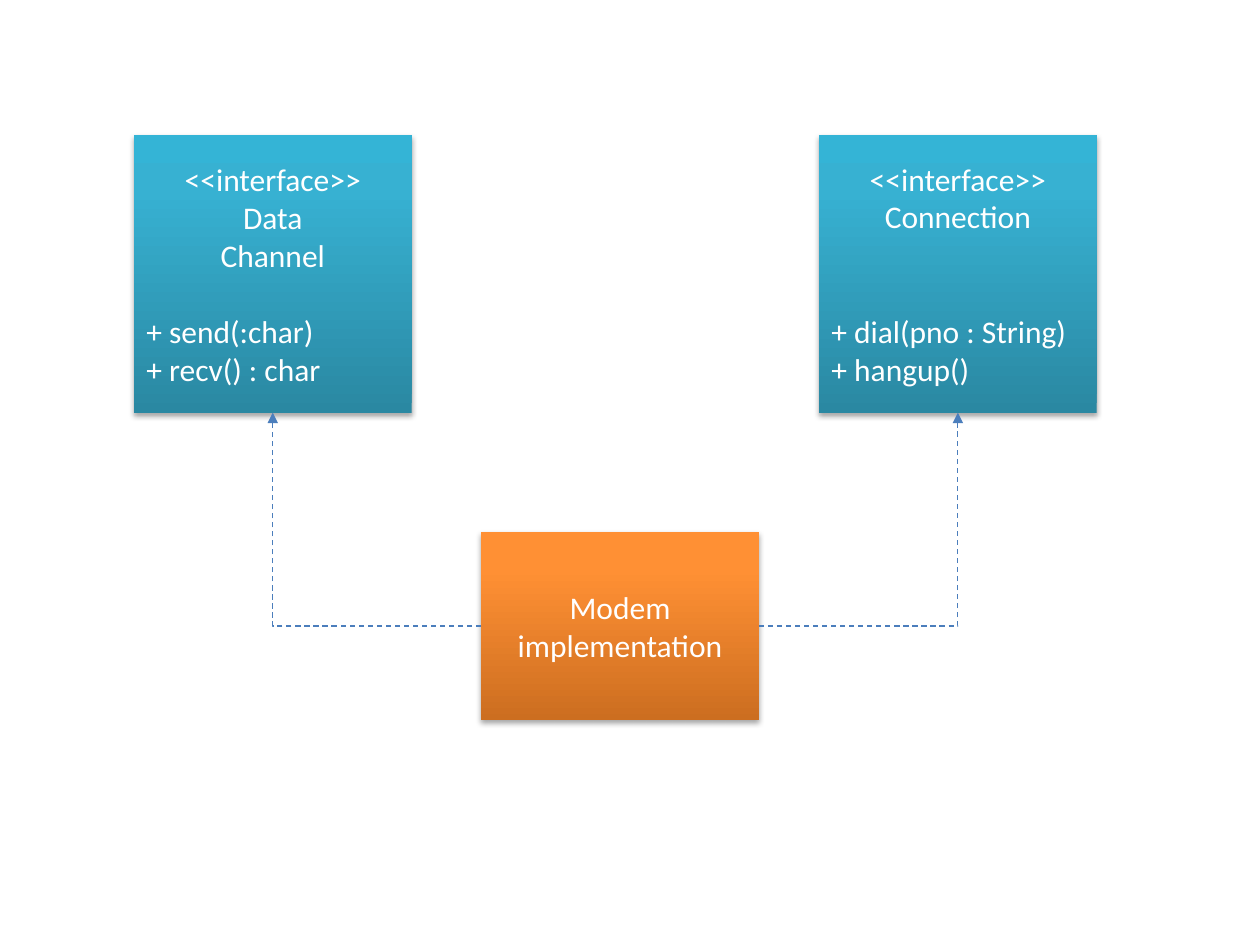
from lxml.etree import SubElement
from pptx import Presentation
from pptx.dml.color import RGBColor
from pptx.enum.dml import MSO_LINE
from pptx.enum.shapes import MSO_CONNECTOR, MSO_SHAPE
from pptx.enum.text import MSO_ANCHOR, PP_ALIGN
from pptx.oxml.ns import qn
from pptx.util import Cm, Pt

WHITE = RGBColor(0xFF, 0xFF, 0xFF)
BLACK = RGBColor(0, 0, 0)
LINE_BLUE = RGBColor(0x4B, 0x7E, 0xBC)
TEAL = (RGBColor(0x2A, 0x88, 0xA2), RGBColor(0x37, 0xB1, 0xD2), RGBColor(0x34, 0xB4, 0xD6))
ORANGE = (RGBColor(0xCC, 0x6E, 0x20), RGBColor(0xFF, 0x90, 0x34), RGBColor(0xFF, 0x91, 0x36))
STOPS = (0, 80000, 100000)

FONT = "Calibri"
LINE_HEIGHT = 22
BOX_WIDTH = Cm(5.6)
INTERFACE_TOP = Cm(2.72)
INTERFACE_HEIGHT = Cm(5.6)
TOP, LEFT, BOTTOM, RIGHT = range(4)


def set_gradient(sp, colors):
    sp.fill.gradient()
    sp.fill.gradient_angle = 90
    gs_lst = sp._element.spPr.find(qn("a:gradFill")).find(qn("a:gsLst"))
    for gs in list(gs_lst):
        gs_lst.remove(gs)
    for pos, color in zip(STOPS, colors):
        gs = SubElement(gs_lst, qn("a:gs"), pos=str(pos))
        SubElement(gs, qn("a:srgbClr"), val=str(color))


def set_shadow(sp):
    sp.shadow.inherit = False
    effects = sp._element.spPr.find(qn("a:effectLst"))
    shadow = SubElement(effects, qn("a:outerShdw"), blurRad=str(Pt(3.1)),
                        dist=str(Pt(1.8)), dir="5400000", rotWithShape="0")
    color = SubElement(shadow, qn("a:srgbClr"), val=str(BLACK))
    SubElement(color, qn("a:alpha"), val="35000")


def add_line(p, text, align):
    p.alignment = align
    r = p.add_run()
    r.text = text
    r.font.name = FONT
    r.font.size = Pt(18)
    r.font.color.rgb = WHITE


def add_box(slide, left, top, height, colors, title, methods=(), gap_lines=0):
    sp = slide.shapes.add_shape(MSO_SHAPE.RECTANGLE, left, top, BOX_WIDTH, height)
    set_gradient(sp, colors)
    sp.line.fill.background()
    set_shadow(sp)
    tf = sp.text_frame
    tf.word_wrap = True
    tf.vertical_anchor = MSO_ANCHOR.MIDDLE
    lines = [(text, PP_ALIGN.CENTER) for text in title]
    lines += [(text, PP_ALIGN.LEFT) for text in methods]
    for i, (text, align) in enumerate(lines):
        p = tf.add_paragraph() if i else tf.paragraphs[0]
        add_line(p, text, align)
        if i == len(title):
            p.space_before = Pt(gap_lines * LINE_HEIGHT)
    return sp


def add_interface(slide, left, name, methods, gap_lines):
    return add_box(slide, left, INTERFACE_TOP, INTERFACE_HEIGHT, TEAL,
                   ["<<interface>>", *name], methods, gap_lines)


def add_realization(slide, source, side, target):
    cxn = slide.shapes.add_connector(MSO_CONNECTOR.ELBOW, 0, 0, 0, 0)
    cxn.begin_connect(source, side)
    cxn.end_connect(target, BOTTOM)
    spPr = cxn._element.spPr
    spPr.find(qn("a:prstGeom")).set("prst", "bentConnector2")
    cxn.line.color.rgb = LINE_BLUE
    cxn.line.width = Pt(0.75)
    cxn.line.dash_style = MSO_LINE.DASH
    SubElement(spPr.find(qn("a:ln")), qn("a:tailEnd"), type="triangle")
    SubElement(spPr, qn("a:effectLst"))


def main():
    prs = Presentation()
    prs.slide_width = Cm(25.4)
    prs.slide_height = Cm(19.05)
    slide = prs.slides.add_slide(prs.slide_layouts[6])

    channel = add_interface(slide, Cm(2.7), ["Data", "Channel"],
                            ["+ send(:char)", "+ recv() : char"], 1)
    connection = add_interface(slide, Cm(16.51), ["Connection"],
                               ["+ dial(pno : String)", "+ hangup()"], 2)
    modem = add_box(slide, Cm(9.7), Cm(10.72), Cm(3.8), ORANGE,
                    ["Modem", "implementation"])

    add_realization(slide, modem, RIGHT, connection)
    add_realization(slide, modem, LEFT, channel)
    prs.save("out.pptx")


if __name__ == "__main__":
    main()
